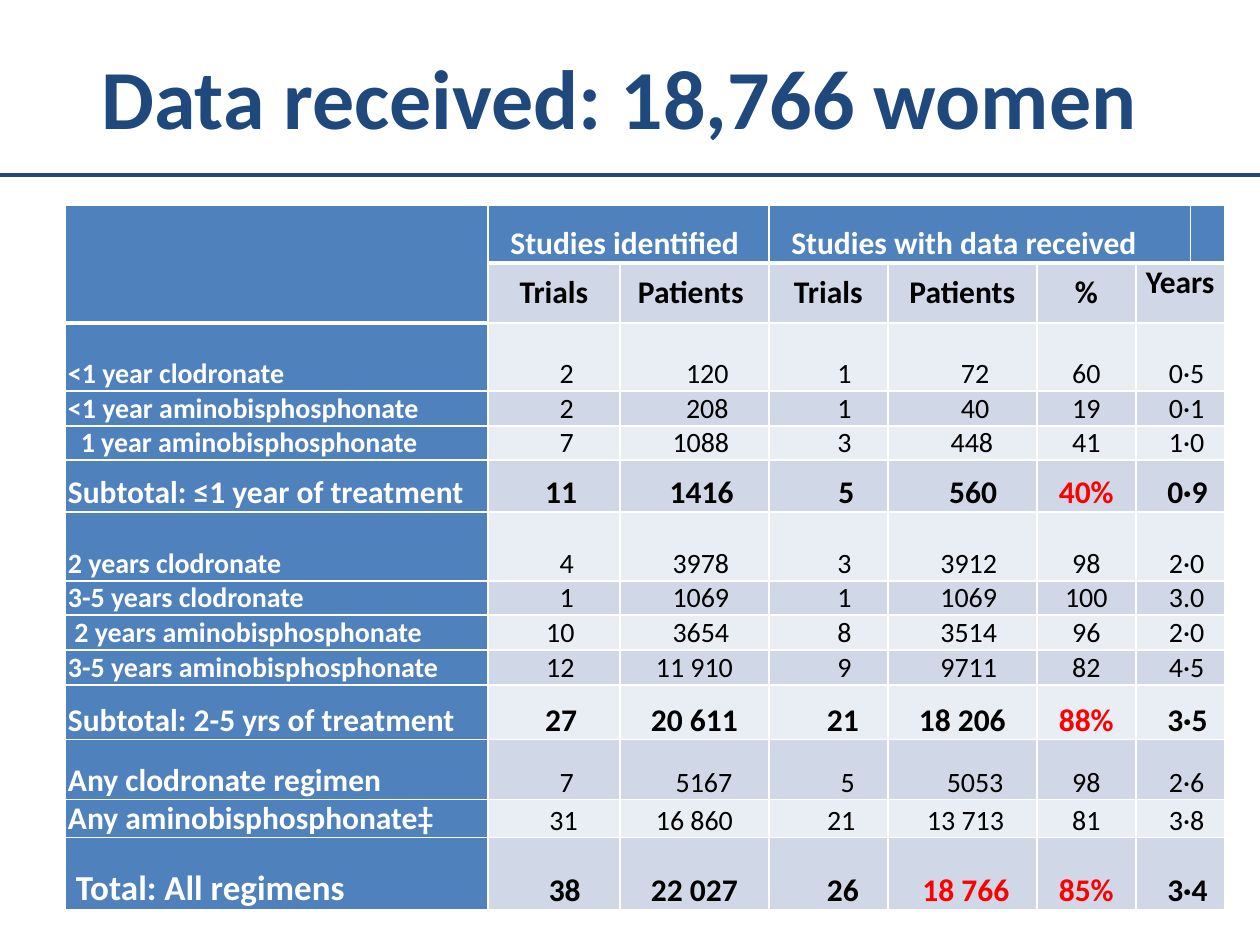
from dataclasses import dataclass
from lxml.etree import SubElement
from pptx import Presentation
from pptx.dml.color import RGBColor as Rgb
from pptx.enum.shapes import MSO_CONNECTOR as Link
from pptx.enum.text import MSO_ANCHOR as Anchor, PP_ALIGN as Align
from pptx.oxml import parse_xml
from pptx.oxml.ns import nsdecls, qn
from pptx.util import Emu, Pt


@dataclass(frozen=True)
class Theme:
    font: str = "Calibri"
    navy: str = "1F497D"
    blue: str = "4F81BD"
    bands: tuple = ("D0D8E8", "E9EDF4")
    white: str = "FFFFFF"
    black: str = "000000"
    red: str = "FF0000"
    title: int = 48
    total: int = 20
    head: int = 18
    body: int = 16


T = Theme()
SCALE = 914400 / 126
PAD = 3
SPACE = 0.4  # px of indent per point of type, for one step

COLS = (423, 132, 149, 119, 149, 99, 55, 34)
ROWS = (58, 60, 68, 35, 34, 52, 69, 34, 35, 35, 55, 60, 38, 72)

HEADS = ("Trials", "Patients", "Trials", "Patients", "%", "Years")
HEAD_STEPS = (0, -1, 0, 0, 0, 0)

# label, label steps, label size, bold values, values, value steps
REGIMENS = (
    ("<1 year clodronate", 0, T.body, False,
     ("2", "120", "1", "72", "60", "0·5"), (4, 4, 5, 4, 0, 2)),
    ("<1 year aminobisphosphonate", 0, T.body, False,
     ("2", "208", "1", "40", "19", "0·1"), (4, 4, 5, 4, 0, 2)),
    ("1 year aminobisphosphonate", 2, T.body, False,
     ("7", "1088", "3", "448", "41", "1·0"), (4, 2, 5, 3, 0, 2)),
    ("Subtotal: ≤1 year of treatment", 0, T.head, True,
     ("11", "1416", "5", "560", "40%", "0·9"), (2, 2, 5, 3, 0, 2)),
    ("2 years clodronate", 0, T.body, False,
     ("4", "3978", "3", "3912", "98", "2·0"), (4, 2, 5, 2, 0, 2)),
    ("3-5 years clodronate", 0, T.body, False,
     ("1", "1069", "1", "1069", "100", "3.0"), (4, 2, 5, 2, 0, 2)),
    ("2 years aminobisphosphonate", 1, T.body, False,
     ("10", "3654", "8", "3514", "96", "2·0"), (2, 2, 5, 2, 0, 2)),
    ("3-5 years aminobisphosphonate", 0, T.body, False,
     ("12", "11 910", "9", "9711", "82", "4·5"), (2, 0, 5, 2, 0, 2)),
    ("Subtotal: 2-5 yrs of treatment", 0, T.head, True,
     ("27", "20 611", "21", "18 206", "88%", "3·5"), (2, 0, 4, 0, 0, 2)),
    ("Any clodronate regimen", 0, T.head, False,
     ("7", "5167", "5", "5053", "98", "2·6"), (4, 3, 6, 4, 0, 2)),
    ("Any aminobisphosphonate‡", 0, T.head, False,
     ("31", "16 860", "21", "13 713", "81", "3·8"), (3, 0, 4, 1, 0, 2)),
    ("Total: All regimens", 1, T.total, True,
     ("38", "22 027", "26", "18 766", "85%", "3·4"), (3, 0, 4, 1, 0, 2)),
)
RED = {"40%", "88%", "85%", "18 766"}


def px(n):
    return Emu(round(n * SCALE))


def style(para, size, color, bold, align):
    para.alignment = align
    for run in para.runs:
        font = run.font
        font.name, font.size, font.bold = T.font, Pt(size), bold
        font.color.rgb = Rgb.from_string(color)


def write(cell, text, size, color, bold=True, align=Align.CENTER,
          anchor=Anchor.BOTTOM, steps=0):
    """Fill in a cell; positive steps indent from the left, negative from the right."""
    cell.text_frame.text = text
    style(cell.text_frame.paragraphs[0], size, color, bold, align)
    cell.vertical_anchor = anchor
    shift = steps * size * SPACE
    cell.margin_left = px(PAD + max(shift, 0))
    cell.margin_right = px(PAD + max(-shift, 0))


def paint(cell, color, top=1, base=1):
    """Give a cell its fill and white borders."""
    cell.margin_top = cell.margin_bottom = 0
    props = cell._tc.get_or_add_tcPr()
    for i, (side, width) in enumerate(zip("LRTB", (1, 1, top, base))):
        props.insert(i, parse_xml(
            f'<a:ln{side} {nsdecls("a")} w="{Pt(width)}"><a:solidFill>'
            f'<a:srgbClr val="{T.white}"/></a:solidFill></a:ln{side}>'))
    cell.fill.solid()
    cell.fill.fore_color.rgb = Rgb.from_string(color)


def add_title(slide, x, y, w, h):
    frame = slide.shapes.add_textbox(px(x), px(y), px(w), px(h)).text_frame
    frame.word_wrap = True
    frame.vertical_anchor = Anchor.MIDDLE
    frame.text = "Data received: 18,766 women"
    style(frame.paragraphs[0], T.title, T.navy, True, Align.CENTER)


def add_rule(slide, x, y, w):
    rule = slide.shapes.add_connector(
        Link.STRAIGHT, px(x), px(y), px(x + w), px(y))
    rule.line.color.rgb = Rgb.from_string(T.navy)
    rule.line.width = Pt(2)
    SubElement(rule._element.spPr, qn("a:effectLst"))


def fill_head(grid):
    for col, text in ((1, "Studies identified"), (3, "Studies with data received")):
        cell = grid.cell(0, col)
        write(cell, text, T.head, T.white, align=Align.JUSTIFY,
              anchor=Anchor.MIDDLE, steps=2.7)
        cell.text_frame.paragraphs[0].line_spacing = 1.5
    for col, (text, steps) in enumerate(zip(HEADS, HEAD_STEPS), 1):
        anchor = Anchor.TOP if text == "Years" else Anchor.MIDDLE
        write(grid.cell(1, col), text, T.head, T.black,
              anchor=anchor, steps=steps)


def fill_body(grid):
    for row, (label, lead, size, bold, values, steps) in enumerate(REGIMENS, 2):
        write(grid.cell(row, 0), label, size, T.white,
              align=Align.LEFT, steps=lead)
        for col, (text, step) in enumerate(zip(values, steps), 1):
            write(grid.cell(row, col), text, T.head if bold else T.body,
                  T.red if text in RED else T.black, bold, steps=step)


def add_grid(slide, x, y):
    grid = slide.shapes.add_table(
        len(ROWS), len(COLS), px(x), px(y), px(sum(COLS)), px(sum(ROWS))).table
    grid.first_row = grid.horz_banding = False
    for col, width in zip(grid.columns, COLS):
        col.width = px(width)
    for row, height in zip(grid.rows, ROWS):
        row.height = px(height)
    for r in range(len(ROWS)):
        for c in range(len(COLS)):
            head = r == 0 or c == 0
            thick = 1 if c == 0 else 0  # row where the heading block ends
            paint(grid.cell(r, c), T.blue if head else T.bands[(r + 1) % 2],
                  top=3 if r == thick + 1 else 1,
                  base=3 if r in (0, thick) else 1)
    grid.cell(0, 0).merge(grid.cell(1, 0))
    grid.cell(0, 1).merge(grid.cell(0, 2))
    grid.cell(0, 3).merge(grid.cell(0, 6))
    for r in range(1, len(ROWS)):
        grid.cell(r, 6).merge(grid.cell(r, 7))
    fill_head(grid)
    fill_body(grid)


def main():
    deck = Presentation()
    deck.slide_width, deck.slide_height = px(1260), px(945)
    slide = deck.slides.add_slide(deck.slide_layouts[6])
    add_title(slide, 84, 37, 1071, 118)
    add_rule(slide, 0, 175, 1260)
    add_grid(slide, 65, 205)
    deck.save("out.pptx")


if __name__ == "__main__":
    main()
